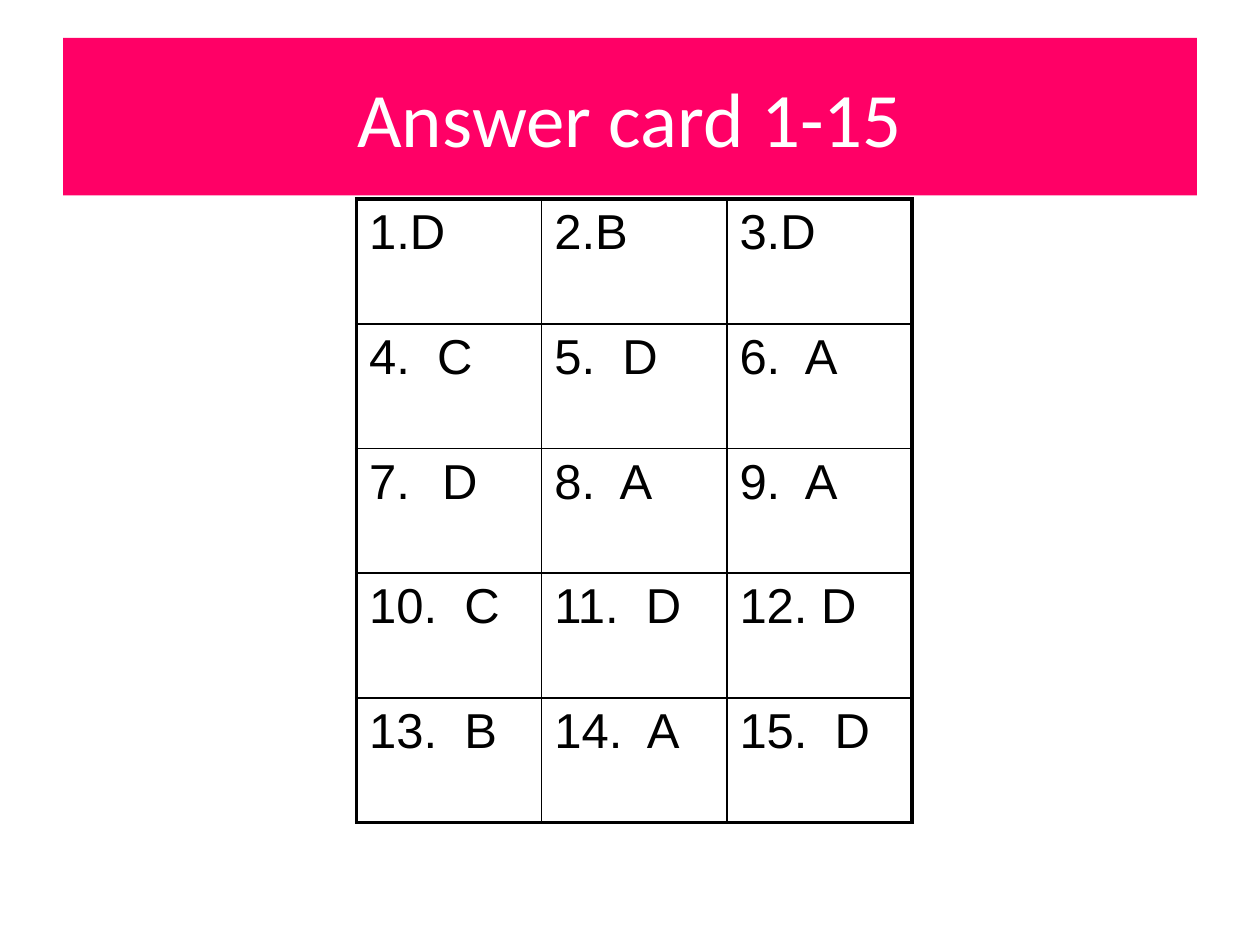
from lxml.etree import SubElement
from pptx import Presentation
from pptx.dml.color import RGBColor
from pptx.enum.text import MSO_ANCHOR, PP_ALIGN
from pptx.oxml.ns import qn
from pptx.util import Inches, Pt

PINK = RGBColor(0xFF, 0x00, 0x66)
WHITE = RGBColor(0xFF, 0xFF, 0xFF)
BLACK = RGBColor(0x00, 0x00, 0x00)

TITLE_ONLY = 5
COLUMN_WIDTH, ROW_HEIGHT = 1.47, 0.99
OUTER_LINE, INNER_LINE = 2.25, 1
NUMBER_INDENT = 0.58

ANSWERS = [
    ["1.D", "2.B", "3.D"],
    ["4.  C", "5.  D", "6.  A"],
    ["D", "8.  A", "9.  A"],
    ["10.  C", "11.  D", "12. D"],
    ["13.  B", "14.  A", "15.  D"],
]
AUTO_NUMBERS = {(2, 0): 7}  # cells whose number comes from list numbering


def write_text(text_frame, text, font="Arial", size=28, color=BLACK, align=None):
    paragraph = text_frame.paragraphs[0]
    paragraph.alignment = align
    run = paragraph.add_run()
    run.text = text
    run.font.name = font
    run.font.size = Pt(size)
    run.font.color.rgb = color
    return paragraph


def space_before(paragraph, percent):
    """Set the space before as a share of the line height."""
    spacing = SubElement(paragraph._p.get_or_add_pPr(), qn("a:spcBef"))
    SubElement(spacing, qn("a:spcPct"), val=str(percent * 1000))


def number_paragraph(paragraph, start):
    properties = paragraph._p.get_or_add_pPr()
    properties.set("marL", str(Inches(NUMBER_INDENT)))
    properties.set("indent", str(-Inches(NUMBER_INDENT)))
    SubElement(properties, qn("a:buFont"), typeface="+mj-lt")
    SubElement(properties, qn("a:buAutoNum"), type="arabicPeriod", startAt=str(start))


def set_borders(cell, **widths):
    """Draw borders in points; keywords are L, R, T and B, in that order."""
    properties = cell._tc.get_or_add_tcPr()
    for side, width in widths.items():
        line = SubElement(properties, qn(f"a:ln{side}"), w=str(Pt(width)))
        fill = SubElement(line, qn("a:solidFill"))
        SubElement(fill, qn("a:srgbClr"), val=str(BLACK))


def add_title(slide, text):
    title = slide.shapes.title
    title.left, title.top = Inches(0.5), Inches(0.3)
    title.width, title.height = Inches(9), Inches(1.25)
    title.fill.solid()
    title.fill.fore_color.rgb = PINK
    title.text_frame.vertical_anchor = MSO_ANCHOR.MIDDLE
    write_text(title.text_frame, text, font="Calibri", size=44, color=WHITE,
               align=PP_ALIGN.CENTER)


def add_answer_table(slide, answers):
    row_count, column_count = len(answers), len(answers[0])
    table = slide.shapes.add_table(
        row_count, column_count, Inches(2.83), Inches(1.58),
        Inches(COLUMN_WIDTH * column_count), Inches(ROW_HEIGHT * row_count)).table
    table.first_row = table.horz_banding = False

    def border_width(is_outer):
        return OUTER_LINE if is_outer else INNER_LINE

    for row, texts in enumerate(answers):
        for column, text in enumerate(texts):
            cell = table.cell(row, column)
            set_borders(cell,
                        L=border_width(column == 0),
                        R=border_width(column == column_count - 1),
                        T=border_width(row == 0),
                        B=border_width(row == row_count - 1))
            cell.fill.background()
            paragraph = write_text(cell.text_frame, text)
            space_before(paragraph, 20)
            if (row, column) in AUTO_NUMBERS:
                number_paragraph(paragraph, AUTO_NUMBERS[row, column])


def main():
    presentation = Presentation()
    presentation.slide_width, presentation.slide_height = Inches(10), Inches(7.5)
    slide = presentation.slides.add_slide(presentation.slide_layouts[TITLE_ONLY])
    add_title(slide, "Answer card 1-15")
    add_answer_table(slide, ANSWERS)
    presentation.save("out.pptx")


if __name__ == "__main__":
    main()
